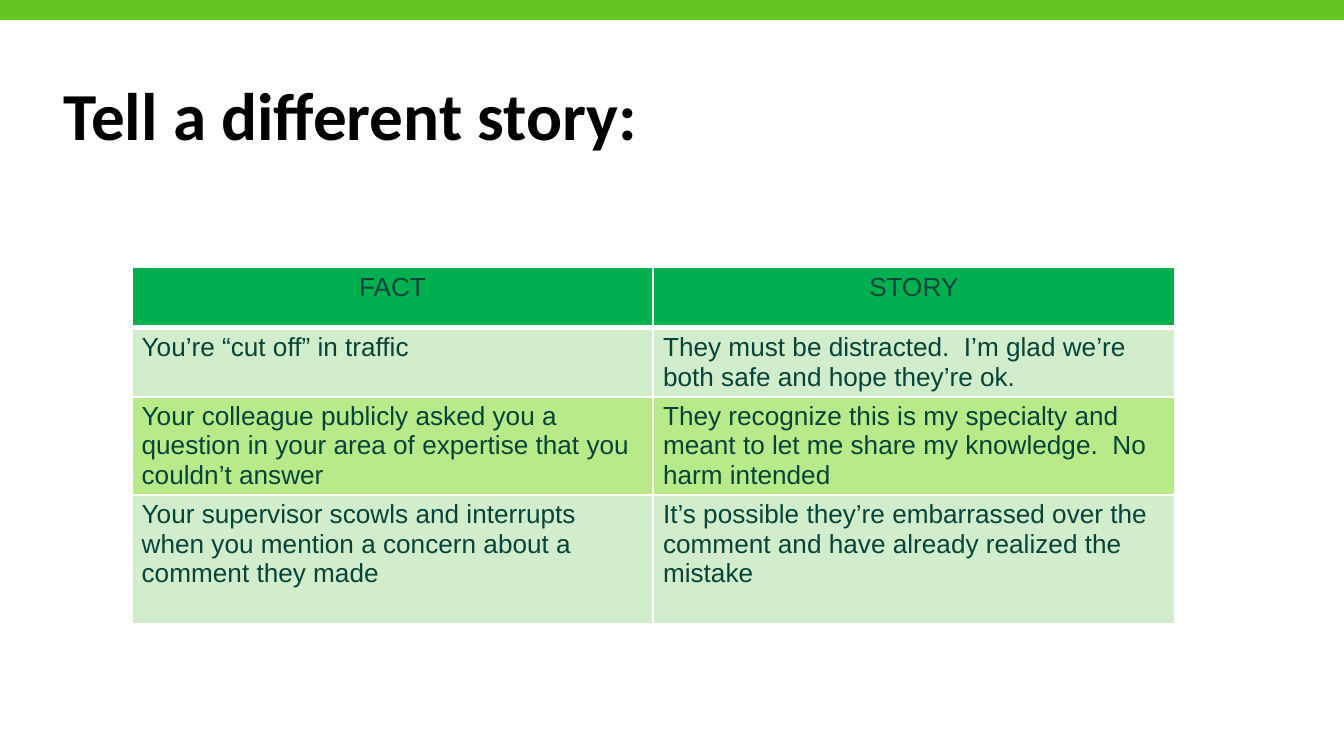
"""Build the "Tell a different story" slide with its fact and story table."""
from lxml import etree
from pptx import Presentation
from pptx.dml.color import RGBColor
from pptx.enum.shapes import MSO_SHAPE
from pptx.enum.text import MSO_ANCHOR, PP_ALIGN
from pptx.oxml.ns import qn
from pptx.util import Pt

RECT = MSO_SHAPE.RECTANGLE
MIDDLE = MSO_ANCHOR.MIDDLE
LEFT, CENTER = PP_ALIGN.LEFT, PP_ALIGN.CENTER
WIDTH, HEIGHT = 720, 405

ROWS = [
    ("FACT", "STORY"),
    ("You’re “cut off” in traffic",
     "They must be distracted.  I’m glad we’re both safe and hope they’re ok."),
    ("Your colleague publicly asked you a question in your area of expertise that you couldn’t answer",
     "They recognize this is my specialty and meant to let me share my knowledge.  No harm intended"),
    ("Your supervisor scowls and interrupts when you mention a concern about a comment they made",
     "It’s possible they’re embarrassed over the comment and have already realized the mistake"),
]
ROW_HEIGHTS = [32.4, 32.4, 48.24, 69.12]


def rgb(value):
    return RGBColor.from_string(value)


class Deck:
    """Hold the style and the current slide."""
    title_font, body_font = "Calibri", "Arial"
    bar, black, ink, white = "67C521", "000000", "064339", "FFFFFF"
    header, bands = "00B050", ("D2EDCB", "B8EA8A")

    def __init__(self, prs):
        self.s = prs.slides.add_slide(prs.slide_layouts[5])

    def rect(self, x, y, w, h, color):
        sp = self.s.shapes.add_shape(RECT, Pt(x), Pt(y), Pt(w), Pt(h))
        sp.shadow.inherit = False
        sp.fill.solid()
        sp.fill.fore_color.rgb = rgb(color)
        sp.line.fill.background()

    def run(self, p, text, font, size, color, bold=False):
        r = p.add_run()
        r.text = text
        r.font.name, r.font.size, r.font.bold = font, Pt(size), bold
        r.font.color.rgb = rgb(color)

    def margins(self, obj):
        obj.margin_left = obj.margin_right = Pt(5.3)
        obj.margin_top = obj.margin_bottom = Pt(2.7)

    def title(self, x, y, w, h, text):
        sp = self.s.shapes.title
        sp.left, sp.top, sp.width, sp.height = Pt(x), Pt(y), Pt(w), Pt(h)
        tf = sp.text_frame
        self.margins(tf)
        tf.word_wrap = True
        tf.vertical_anchor = MIDDLE
        p = tf.paragraphs[0]
        p.alignment, p.line_spacing, p.space_after = LEFT, 0.9, Pt(4.5)
        self.run(p, text, self.title_font, 36, self.black, True)

    def borders(self, cell, bottom):
        tc_pr = cell._tc.get_or_add_tcPr()
        for side, width in (("L", 1), ("R", 1), ("T", 1), ("B", bottom)):
            ln = etree.SubElement(tc_pr, qn(f"a:ln{side}"), w=str(Pt(width)))
            fill = etree.SubElement(ln, qn("a:solidFill"))
            etree.SubElement(fill, qn("a:srgbClr"), val=self.white)

    def cell(self, cell, text, is_header, fill):
        self.margins(cell)
        self.borders(cell, 3 if is_header else 1)
        cell.fill.solid()
        cell.fill.fore_color.rgb = rgb(fill)
        p = cell.text_frame.paragraphs[0]
        p.alignment = CENTER if is_header else LEFT
        self.run(p, text, self.body_font, 14, self.ink)

    def table(self, x, y, w, rows, heights):
        n = len(rows[0])
        frame = self.s.shapes.add_table(len(rows), n, Pt(x), Pt(y), Pt(w), Pt(sum(heights)))
        table = frame.table
        for col in table.columns:
            col.width = Pt(w / n)
        for i, (texts, height) in enumerate(zip(rows, heights)):
            table.rows[i].height = Pt(height)
            fill = self.bands[(i - 1) % 2] if i else self.header
            for j, text in enumerate(texts):
                self.cell(table.cell(i, j), text, i == 0, fill)


def main():
    prs = Presentation()
    prs.slide_width, prs.slide_height = Pt(WIDTH), Pt(HEIGHT)
    deck = Deck(prs)
    deck.rect(0, 0, WIDTH, 10.8, deck.bar)
    deck.title(28.8, 38.2, 644.4, 51.1, "Tell a different story:")
    deck.table(70.6, 143.3, 558.7, ROWS, ROW_HEIGHTS)
    prs.save("out.pptx")


if __name__ == "__main__":
    main()
